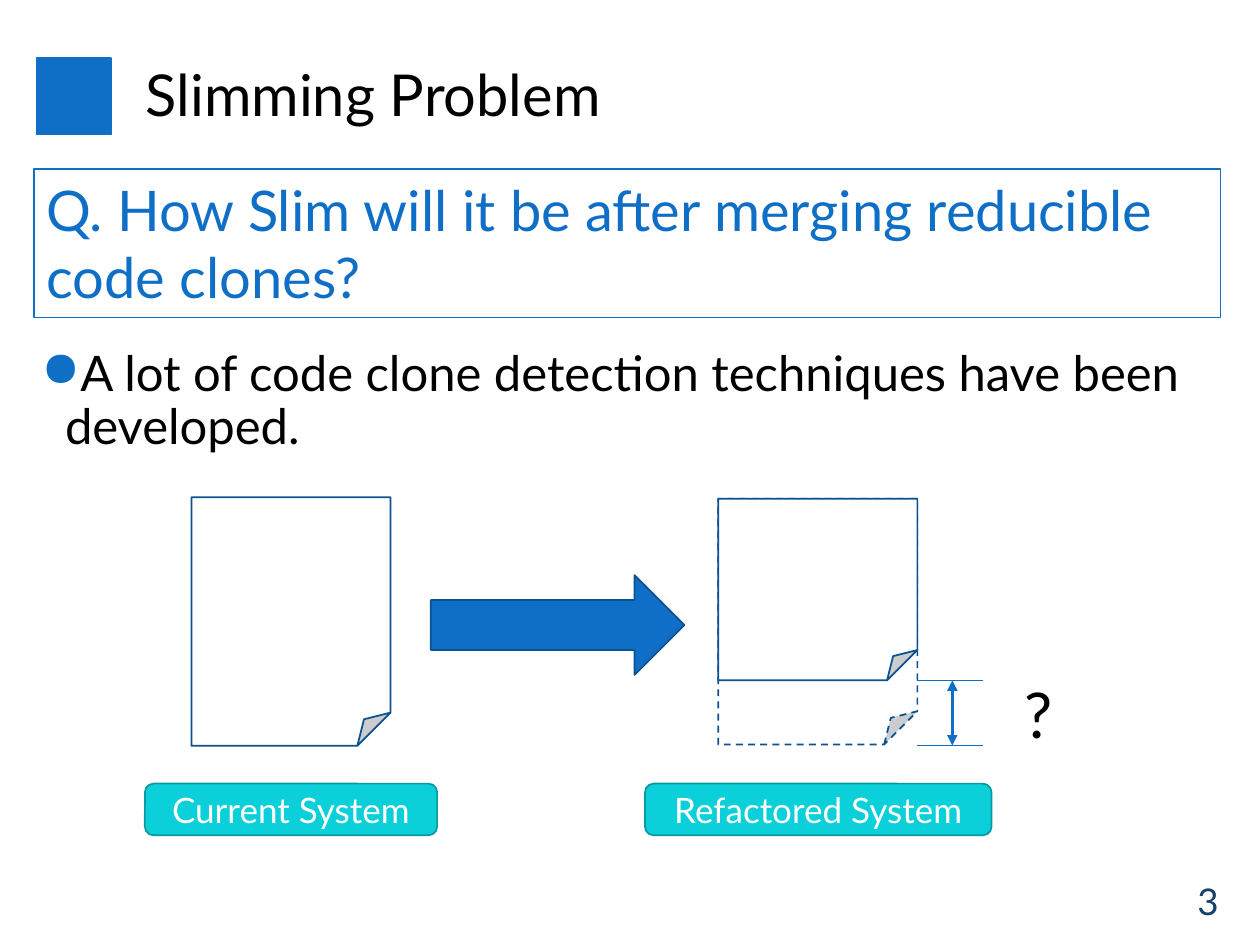
from lxml import etree
from pptx import Presentation
from pptx.dml.color import RGBColor
from pptx.enum.dml import MSO_LINE
from pptx.enum.shapes import MSO_CONNECTOR, MSO_SHAPE
from pptx.enum.text import MSO_ANCHOR, PP_ALIGN
from pptx.oxml.ns import qn
from pptx.util import Pt

RECTANGLE = MSO_SHAPE.RECTANGLE
ROUNDED = MSO_SHAPE.ROUNDED_RECTANGLE
FOLDED_CORNER = MSO_SHAPE.FOLDED_CORNER
RIGHT_ARROW = MSO_SHAPE.RIGHT_ARROW
STRAIGHT = MSO_CONNECTOR.STRAIGHT
DASH = MSO_LINE.DASH
TOP, MIDDLE = MSO_ANCHOR.TOP, MSO_ANCHOR.MIDDLE
LEFT, CENTER, RIGHT = PP_ALIGN.LEFT, PP_ALIGN.CENTER, PP_ALIGN.RIGHT

FONT = "Lato"
BLACK = RGBColor(0x00, 0x00, 0x00)
WHITE = RGBColor(0xFF, 0xFF, 0xFF)
BLUE = RGBColor(0x0F, 0x6F, 0xC6)
DARK_BLUE = RGBColor(0x0B, 0x52, 0x92)
NAVY = RGBColor(0x17, 0x40, 0x6D)
CYAN = RGBColor(0x0B, 0xD0, 0xD9)
DARK_CYAN = RGBColor(0x08, 0x9A, 0xA1)


def write_text(shape, text, size, color, align=LEFT, anchor=TOP):
    frame = shape.text_frame
    frame.word_wrap = True
    frame.vertical_anchor = anchor
    paragraph = frame.paragraphs[0]
    paragraph.text = text
    paragraph.alignment = align
    paragraph.font.name = FONT
    paragraph.font.size = Pt(size)
    paragraph.font.color.rgb = color
    return paragraph


def add_text(slide, box, text, size, color, align=LEFT, anchor=TOP):
    shape = slide.shapes.add_textbox(*map(Pt, box))
    return write_text(shape, text, size, color, align, anchor)


def add_shape(slide, kind, box, fill, line, width=1):
    """Add a preset shape; a fill of None leaves it hollow."""
    shape = slide.shapes.add_shape(kind, *map(Pt, box))
    shape.shadow.inherit = False
    if fill is None:
        shape.fill.background()
    else:
        shape.fill.solid()
        shape.fill.fore_color.rgb = fill
    shape.line.color.rgb = line
    shape.line.width = Pt(width)
    return shape


def add_label(slide, box, text):
    label = add_shape(slide, ROUNDED, box, CYAN, DARK_CYAN)
    write_text(label, text, 20, WHITE, CENTER, MIDDLE)


def add_line(slide, start, end, width, arrowheads=False):
    line = slide.shapes.add_connector(STRAIGHT, *map(Pt, start + end))
    line.line.color.rgb = BLUE
    line.line.width = Pt(width)
    properties = line._element.spPr
    if arrowheads:
        outline = properties.find(qn("a:ln"))
        for tag in ("a:headEnd", "a:tailEnd"):
            etree.SubElement(outline, qn(tag), type="triangle")
    etree.SubElement(properties, qn("a:effectLst"))


def add_bullet(paragraph, character, color, indent):
    properties = paragraph._p.get_or_add_pPr()
    properties.set("marL", str(Pt(indent)))
    properties.set("indent", str(-Pt(indent)))
    bullet_color = etree.SubElement(properties, qn("a:buClr"))
    etree.SubElement(bullet_color, qn("a:srgbClr"), val=str(color))
    bullet = etree.SubElement(properties, qn("a:buChar"), char=character)
    default_font = properties.find(qn("a:defRPr"))
    for element in (bullet_color, bullet):
        default_font.addprevious(element)


def add_heading(slide):
    add_shape(slide, RECTANGLE, (21, 33, 42.5, 44), BLUE, BLUE)
    title = add_text(slide, (76.3, 28.8, 626.4, 54), "Slimming Problem",
                     33, BLACK, anchor=MIDDLE)
    title.line_spacing = 0.9
    question = add_shape(slide, RECTANGLE, (19.4, 96.5, 678.2, 85),
                         None, BLUE, 0.75)
    write_text(question, "Q. How Slim will it be after merging reducible code clones?",
               32, BLUE)


def add_body(slide):
    body = add_text(slide, (16.6, 195.8, 684, 74.2),
                    "A lot of code clone detection techniques have been developed.",
                    28, BLACK)
    body.line_spacing = 0.9
    body.space_before = Pt(7.5)
    add_bullet(body, "●", BLUE, 13.5)


def add_diagram(slide):
    sheet_width, top = 113.8, 285
    refactored_left, slim_height, full_height = 410.4, 103.8, 140.4
    add_shape(slide, FOLDED_CORNER, (109.4, 284.2, sheet_width, 142), WHITE, DARK_BLUE)
    add_label(slide, (82.8, 447.8, 167, 29.5), "Current System")
    add_shape(slide, RIGHT_ARROW, (246.2, 328.7, 144.9, 56.9), BLUE, DARK_BLUE)

    former = add_shape(slide, FOLDED_CORNER,
                       (refactored_left, top, sheet_width, full_height), WHITE, DARK_BLUE)
    former.line.dash_style = DASH
    add_label(slide, (368.6, 447.8, 198, 29.5), "Refactored System")
    add_shape(slide, FOLDED_CORNER,
              (refactored_left, top, sheet_width, slim_height), WHITE, DARK_BLUE)

    left, right = refactored_left + sheet_width, 561.6
    upper, lower = top + slim_height, 426
    middle = 544.2
    add_line(slide, (middle, upper), (middle, lower), 1.5, arrowheads=True)
    for y in (upper, lower):
        add_line(slide, (left, y), (right, y), 0.5)
    add_text(slide, (578.2, 382.3, 67, 51), "?", 36, BLACK)


def main():
    presentation = Presentation()
    presentation.slide_width = Pt(720)
    presentation.slide_height = Pt(540)
    slide = presentation.slides.add_slide(presentation.slide_layouts[6])
    add_heading(slide)
    add_body(slide)
    add_text(slide, (508.3, 500.4, 195.1, 28.8), "3", 21, NAVY, RIGHT, MIDDLE)
    add_diagram(slide)
    presentation.save("out.pptx")


if __name__ == "__main__":
    main()
